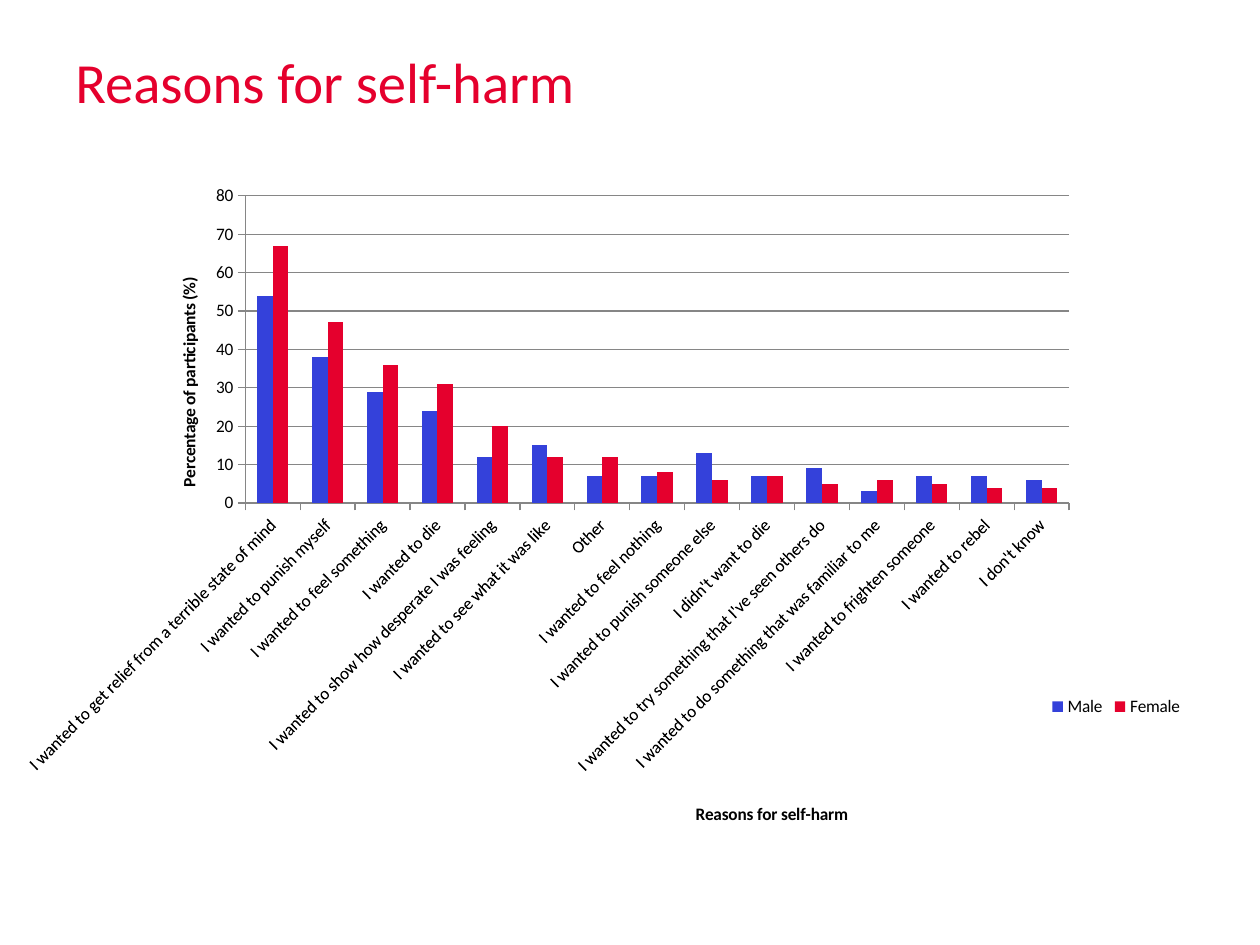
from pptx import Presentation
from pptx.chart.data import CategoryChartData as ChartData
from pptx.dml.color import RGBColor as Rgb
from pptx.enum.chart import XL_CHART_TYPE as ChartType
from pptx.enum.chart import XL_LEGEND_POSITION as LegendPosition
from pptx.enum.chart import XL_TICK_MARK as TickMark
from pptx.enum.text import MSO_ANCHOR as Anchor
from pptx.oxml import parse_xml
from pptx.oxml.ns import nsdecls, qn
from pptx.util import Inches, Pt

WIDTH, HEIGHT = Inches(10), Inches(7.5)
FONT = "Calibri"
COLORS = {"male": "3441DA", "female": "E5002D", "text": "000000", "line": "868686"}

REASONS = [
    ("I wanted to get relief from a terrible state of mind", 54, 67),
    ("I wanted to punish myself", 38, 47),
    ("I wanted to feel something", 29, 36),
    ("I wanted to die", 24, 31),
    ("I wanted to show how desperate I was feeling", 12, 20),
    ("I wanted to see what it was like", 15, 12),
    ("Other", 7, 12),
    ("I wanted to feel nothing", 7, 8),
    ("I wanted to punish someone else", 13, 6),
    ("I didn't want to die", 7, 7),
    ("I wanted to try something that I've seen others do", 9, 5),
    ("I wanted to do something that was familiar to me", 3, 6),
    ("I wanted to frighten someone", 7, 5),
    ("I wanted to rebel", 7, 4),
    ("I don't know", 6, 4),
]


def color(name):
    return Rgb.from_string(COLORS[name])


def area(left, top, width, height):
    return [int(WIDTH * left), int(HEIGHT * top), int(WIDTH * width), int(HEIGHT * height)]


def style_font(font, size, name, bold=False):
    font.name, font.size, font.bold = FONT, Pt(size), bold
    font.color.rgb = color(name)


def add_title(page, text):
    box = page.shapes.add_textbox(*area(0.05, 0.04, 0.9, 0.09))
    frame = box.text_frame
    frame.word_wrap = True
    frame.vertical_anchor = Anchor.MIDDLE
    span = frame.paragraphs[0].add_run()
    span.text = text
    style_font(span.font, 32.4, "female")


def place(element, index, left, top, width=None, height=None, inner=False):
    for old in element.findall(qn("c:layout")):
        element.remove(old)
    target = '<c:layoutTarget val="inner"/>' if inner else ""
    modes = '<c:xMode val="edge"/><c:yMode val="edge"/>'
    shares = {"x": left, "y": top, "w": width, "h": height}
    parts = "".join(f'<c:{key} val="{value}"/>' for key, value in shares.items() if value is not None)
    element.insert(index, parse_xml(
        f'<c:layout {nsdecls("c")}><c:manualLayout>{target}{modes}{parts}</c:manualLayout></c:layout>'))


def style_axis(axis, title, left, top, title_turn, label_turn):
    axis.major_tick_mark = TickMark.OUTSIDE
    axis.minor_tick_mark = TickMark.NONE
    style_font(axis.tick_labels.font, 10, "text")
    axis.format.line.color.rgb = color("line")
    axis.format.line.width = Pt(0.75)
    span = axis.axis_title.text_frame.paragraphs[0].add_run()
    span.text = title
    style_font(span.font, 10, "text", bold=True)
    heading = axis.axis_title._element
    heading.find(".//" + qn("a:bodyPr")).set("rot", str(title_turn * 60000))
    place(heading, 1, left, top)
    labels = axis._element.find(qn("c:txPr"))
    labels.find(qn("a:bodyPr")).set("rot", str(label_turn * 60000))


def add_legend(chart):
    chart.has_legend = True
    legend = chart.legend
    legend.position = LegendPosition.RIGHT
    legend.include_in_layout = False
    style_font(legend.font, 10, "text")
    place(legend._element, 1, 0.85, 0.78, 0.12, 0.04)


def add_reasons_chart(page):
    labels, male, female = zip(*REASONS)
    data = ChartData(number_format="0")
    data.categories = labels
    data.add_series("Male", male)
    data.add_series("Female", female)
    chart = page.shapes.add_chart(
        ChartType.COLUMN_CLUSTERED, *area(0.02, 0.143, 0.95, 0.756), data).chart
    chart.has_title = False
    style_font(chart.font, 10, "text")
    plot = chart.plots[0]
    plot.gap_width, plot.overlap = 150, 0
    plot.vary_by_categories = False
    for series, name in zip(plot.series, ("male", "female")):
        series.format.fill.solid()
        series.format.fill.fore_color.rgb = color(name)
    style_axis(chart.category_axis, "Reasons for self-harm", 0.55, 0.93, 0, -45)
    values = chart.value_axis
    style_axis(values, "Percentage of participants (%)", 0.11, 0.19, -90, 0)
    values.minimum_scale, values.maximum_scale, values.major_unit = 0, 80, 10
    values.tick_labels.number_format = "0"
    values.tick_labels.number_format_is_linked = False
    values.has_major_gridlines = True
    values.major_gridlines.format.line.color.rgb = color("line")
    values.major_gridlines.format.line.width = Pt(0.75)
    place(chart._chartSpace.find(".//" + qn("c:plotArea")), 0, 0.17, 0.085, 0.7, 0.43, inner=True)
    add_legend(chart)


def main():
    deck = Presentation()
    deck.slide_width, deck.slide_height = WIDTH, HEIGHT
    page = deck.slides.add_slide(deck.slide_layouts[6])
    add_title(page, "Reasons for self-harm")
    add_reasons_chart(page)
    deck.save("out.pptx")


if __name__ == "__main__":
    main()
